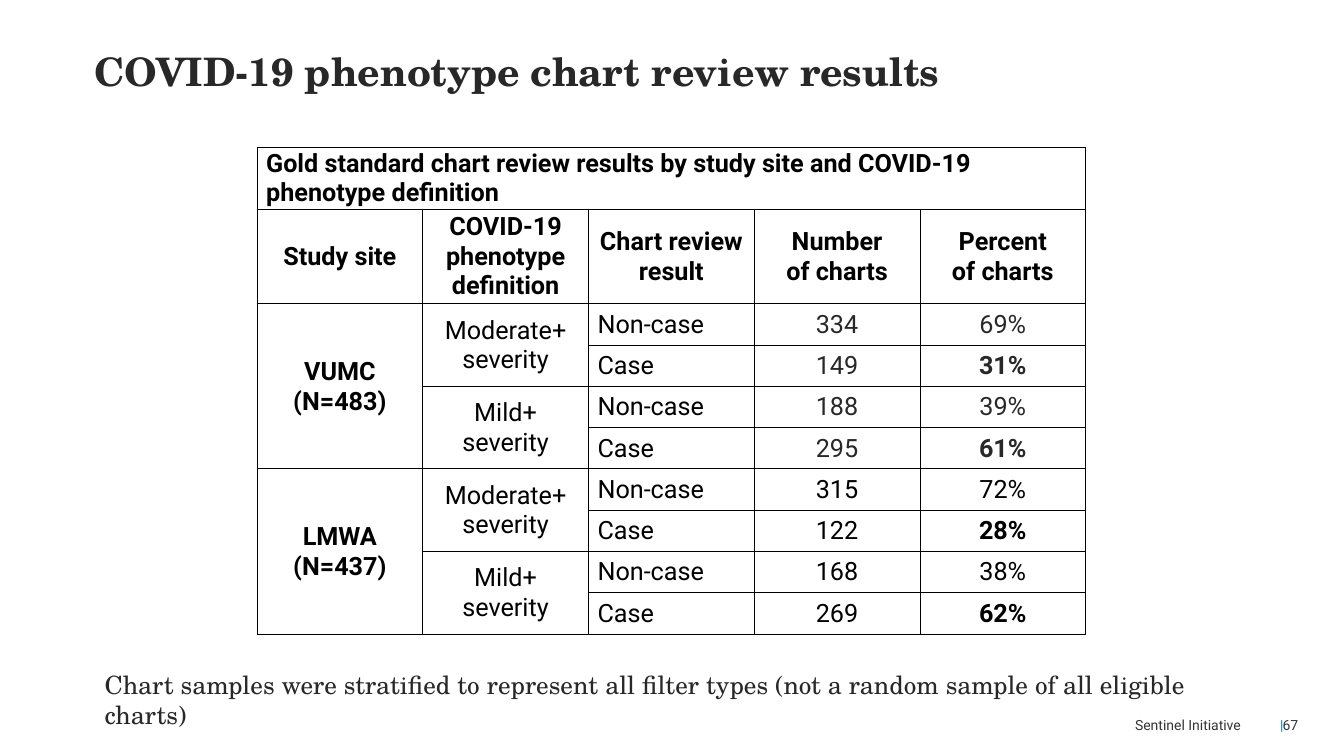
from dataclasses import dataclass

from lxml.etree import SubElement
from pptx import Presentation
from pptx.dml.color import RGBColor
from pptx.enum.text import MSO_ANCHOR as Anchor, PP_ALIGN as Align
from pptx.oxml.ns import qn
from pptx.util import Pt


@dataclass(frozen=True)
class Theme:
    """Colours, fonts and type sizes of the slide."""
    ink: str = "282828"
    black: str = "000000"
    footer: str = "343434"
    accent: str = "007CBA"
    serif: str = "TeX Gyre Schola"
    sans: str = "Roboto"
    title_size: int = 28
    body_size: int = 18
    footer_size: int = 10


THEME = Theme()
CAPTION = "Gold standard chart review results by study site and COVID-19 phenotype definition"
HEADERS = ["Study site", "COVID-19 phenotype definition", "Chart review\vresult",
           "Number\vof charts", "Percent\vof charts"]
DEFINITIONS = ["Moderate+\vseverity", "Mild+\vseverity"]
RESULTS = ["Non-case", "Case"]
SITES = [
    ("VUMC\v(N=483)", THEME.ink, [("334", "69%"), ("149", "31%"), ("188", "39%"), ("295", "61%")]),
    ("LMWA\v(N=437)", THEME.black, [("315", "72%"), ("122", "28%"), ("168", "38%"), ("269", "62%")]),
]


def write_text(frame, text, font, size, color, bold=False, align=Align.LEFT):
    """Fill a text frame with one styled paragraph."""
    frame.text = text
    para = frame.paragraphs[0]
    para.alignment = align
    for span in para.runs:
        span.font.name = font
        span.font.size = Pt(size)
        span.font.bold = bold
        span.font.color.rgb = RGBColor.from_string(color)


def add_text(page, area, text, font, size, color, bold=False, align=Align.LEFT,
             anchor=Anchor.TOP, insets=(7.2, 3.6, 7.2, 3.6)):
    """Add a wrapped text box; area and insets are in points."""
    frame = page.shapes.add_textbox(*map(Pt, area)).text_frame
    frame.word_wrap = True
    frame.vertical_anchor = anchor
    frame.margin_left, frame.margin_top, frame.margin_right, frame.margin_bottom = map(Pt, insets)
    write_text(frame, text, font, size, color, bold, align)


def add_footer(page, left, width, text, color):
    """Add a right-aligned footer item."""
    add_text(page, (left, 504.7, width, 26.6), text, THEME.sans, THEME.footer_size, color,
             align=Align.RIGHT, anchor=Anchor.MIDDLE, insets=(7.2, 7.2, 0, 7.2))


def frame_cell(cell):
    """Draw thin borders around a cell and clear its fill."""
    for side in ("lnL", "lnR", "lnT", "lnB"):
        line = SubElement(cell._tc.get_or_add_tcPr(), qn(f"a:{side}"), w=str(Pt(0.5)))
        SubElement(SubElement(line, qn("a:solidFill")), qn("a:srgbClr"), val=THEME.black)
    cell.fill.background()


def write_cell(cell, text, color=THEME.black, bold=False, align=Align.CENTER):
    """Write a vertically centred table cell."""
    cell.vertical_anchor = Anchor.MIDDLE
    cell.margin_left = Pt(6.5 if align == Align.LEFT else 0.7)
    cell.margin_top = cell.margin_right = Pt(0.7)
    cell.margin_bottom = 0
    write_text(cell.text_frame, text, THEME.sans, THEME.body_size, color, bold, align)


def add_results_table(page):
    """Add the chart review table with its merged cells."""
    heights = [39.6, 67.7] + [29.5] * 8
    table = page.shapes.add_table(len(heights), len(HEADERS), Pt(183.6), Pt(105.3),
                                  Pt(592), Pt(sum(heights))).table
    table.first_row = table.horz_banding = False
    for column in table.columns:
        column.width = Pt(118.4)
    for row, height in zip(table.rows, heights):
        row.height = Pt(height)
    for cell in table.iter_cells():
        frame_cell(cell)

    table.cell(0, 0).merge(table.cell(0, 4))
    write_cell(table.cell(0, 0), CAPTION, bold=True, align=Align.LEFT)
    for column, header in enumerate(HEADERS):
        write_cell(table.cell(1, column), header, bold=True)
    for site_index, (site, color, values) in enumerate(SITES):
        top = 2 + 4 * site_index
        table.cell(top, 0).merge(table.cell(top + 3, 0))
        write_cell(table.cell(top, 0), site, bold=True)
        for index, definition in enumerate(DEFINITIONS):
            first = top + 2 * index
            table.cell(first, 1).merge(table.cell(first + 1, 1))
            write_cell(table.cell(first, 1), definition)
        for offset, (count, percent) in enumerate(values):
            result = RESULTS[offset % 2]
            write_cell(table.cell(top + offset, 2), result, align=Align.LEFT)
            write_cell(table.cell(top + offset, 3), count, color)
            write_cell(table.cell(top + offset, 4), percent, color, bold=result == "Case")


def main():
    """Build and save the slide."""
    deck = Presentation()
    deck.slide_width, deck.slide_height = Pt(960), Pt(540)
    page = deck.slides.add_slide(deck.slide_layouts[6])
    add_footer(page, 886.3, 30.5, "|", THEME.accent)
    add_footer(page, 908, 19.4, "67", THEME.footer)
    add_footer(page, 655.9, 230.4, "Sentinel Initiative", THEME.footer)
    add_text(page, (67.7, 20.2, 828, 47.5), "COVID-19 phenotype chart review results",
             THEME.serif, THEME.title_size, THEME.ink, bold=True,
             anchor=Anchor.BOTTOM, insets=(0, 0, 0, 0))
    add_results_table(page)
    add_text(page, (67.7, 474.5, 837.4, 28.8),
             "Chart samples were stratified to represent all filter types "
             "(not a random sample of all eligible charts)",
             THEME.serif, THEME.body_size, THEME.ink)
    deck.save("out.pptx")


if __name__ == "__main__":
    main()
